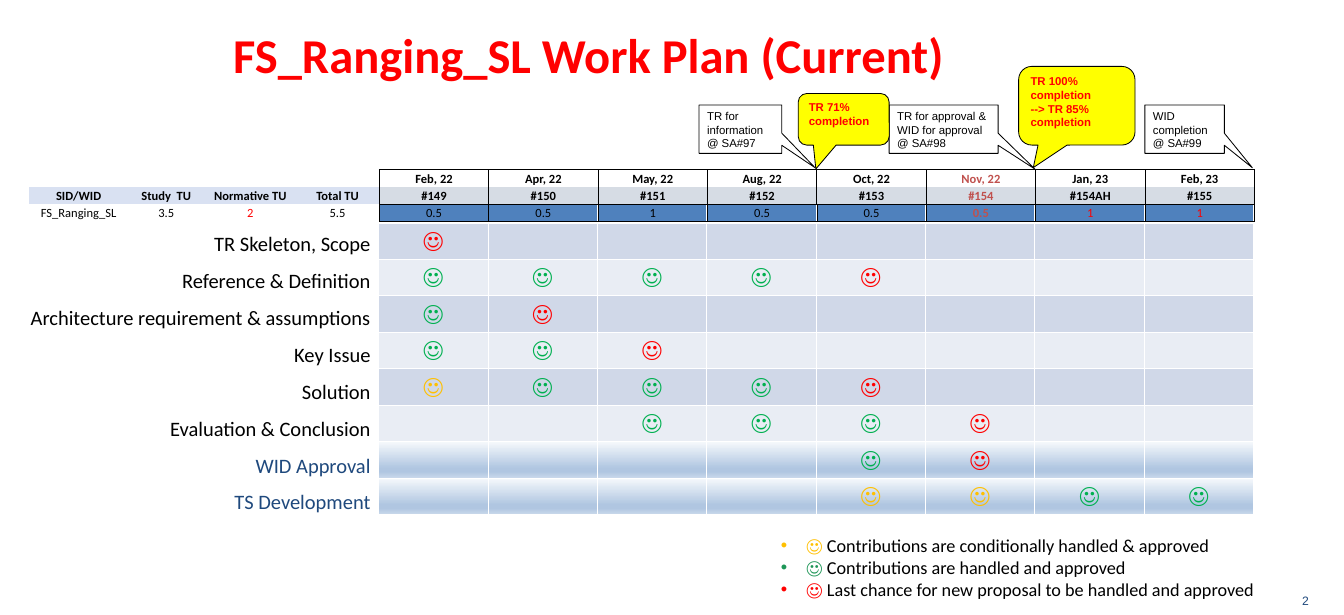
from lxml import etree
from pptx import Presentation
from pptx.dml.color import RGBColor
from pptx.enum.shapes import MSO_SHAPE
from pptx.enum.text import MSO_ANCHOR, PP_ALIGN
from pptx.oxml import parse_xml
from pptx.oxml.ns import nsdecls, qn
from pptx.util import Inches, Pt

LEFT, CENTER, RIGHT = PP_ALIGN.LEFT, PP_ALIGN.CENTER, PP_ALIGN.RIGHT
TOP, MIDDLE, BOTTOM = MSO_ANCHOR.TOP, MSO_ANCHOR.MIDDLE, MSO_ANCHOR.BOTTOM
RECT_CALLOUT = MSO_SHAPE.RECTANGULAR_CALLOUT
ROUND_CALLOUT = MSO_SHAPE.ROUNDED_RECTANGULAR_CALLOUT

BLACK, WHITE, RED, YELLOW = "000000", "FFFFFF", "FF0000", "FFFF00"
NAVY, BRICK, BLUE = "1F497D", "C0504D", "4F81BD"
BANDS = ["D0D8E8", "E9EDF4"]
GRADIENT = [(0, "F6F9FC"), (74, "B0C6E1"), (83, "B0C6E1"), (100, "CAD9EB")]
SMILEY = "☺"
SMILEY_COLORS = {"R": RED, "G": "00B050", "Y": "FFC000"}

TOPICS = [
    ("TR Skeleton, Scope", "R......."),
    ("Reference & Definition", "GGGGR..."),
    ("Architecture requirement & assumptions", "GR......"),
    ("Key Issue", "GGR....."),
    ("Solution", "YGGGR..."),
    ("Evaluation & Conclusion", "..GGGR.."),
    ("WID Approval", "....GR.."),
    ("TS Development", "....YYGG"),
]
STUDY_TOPICS = 6
TU_COLS = 4
MEETING_COL = 1.335
NOV = 9
SCHEDULE = [
    ["", "", "", "", "Feb, 22", "Apr, 22", "May, 22", "Aug, 22",
     "Oct, 22", "Nov, 22", "Jan, 23", "Feb, 23"],
    ["SID/WID", "Study  TU", "Normative TU", "Total TU", "#149", "#150", "#151",
     "#152", "#153", "#154", "#154AH", "#155"],
    ["FS_Ranging_SL", "3.5", "2", "5.5", "0.5", "0.5", "1", "0.5", "0.5", "0.5", "1", "1"],
]
MEETING_EDGES = [
    {"L": 1, "R": 1, "T": 1},
    {"L": 1, "R": 1, "B": 0.5},
    {"L": 0.5, "R": 0.5, "T": 0.5, "B": 0.5},
]
NOTES = [
    ("TR for information @ SA#97", (8.53, 1.28, 1.01, 0.59), (0.902, 0.797)),
    ("TR for approval & WID for approval @ SA#98", (10.85, 1.28, 1.33, 0.59), (0.839, 0.828)),
    ("WID completion @ SA#99", (13.97, 1.28, 0.97, 0.59), (0.853, 0.797)),
]
MILESTONES = [
    (["TR 71% completion"], (9.74, 1.14, 1.11, 0.63), (-0.306, 0.962, 0.167)),
    (["TR 100% completion", "--> TR 85% completion"], (12.43, 0.81, 1.42, 0.96),
     (-0.374, 0.786, 0.167)),
]
LEGEND = [
    ("FFC000", "Contributions are conditionally handled & approved"),
    ("1E9657", "Contributions are handled and approved"),
    (RED, "Last chance for new proposal to be handled and approved"),
]


def rgb(value):
    return RGBColor.from_string(value)


def write(p, text, size=11, color=BLACK, bold=False, font="Calibri", align=LEFT):
    p.alignment = align
    r = p.add_run()
    r.text = text
    r.font.name, r.font.size, r.font.bold = font, Pt(size), bold
    r.font.color.rgb = rgb(color)


def set_borders(cell, color, edges):
    """Draw the given edges (side: width in points) and clear the others."""
    tcPr = cell._tc.get_or_add_tcPr()
    for i, side in enumerate("LRTB"):
        width = edges.get(side, 0)
        fill = (f'<a:solidFill><a:srgbClr val="{color}"/></a:solidFill>'
                if width else "<a:noFill/>")
        tcPr.insert(i, parse_xml(
            f'<a:ln{side} {nsdecls("a")} w="{Pt(width)}">{fill}</a:ln{side}>'))


def set_gradient(cell, stops):
    gs = "".join(f'<a:gs pos="{pos * 1000}"><a:srgbClr val="{color}"/></a:gs>'
                 for pos, color in stops)
    cell._tc.get_or_add_tcPr().append(parse_xml(
        f'<a:gradFill {nsdecls("a")} rotWithShape="1"><a:gsLst>{gs}</a:gsLst>'
        '<a:lin ang="5400000" scaled="0"/></a:gradFill>'))


def set_fill(cell, fill):
    if fill is None:
        cell.fill.background()
    elif isinstance(fill, list):
        set_gradient(cell, fill)
    else:
        cell.fill.solid()
        cell.fill.fore_color.rgb = rgb(fill)


def add_bullet(p, indent):
    pPr = p._p.get_or_add_pPr()
    pPr.set("marL", str(Inches(indent)))
    pPr.set("indent", str(-Inches(indent)))
    etree.SubElement(pPr, qn("a:buFont")).set("typeface", "Arial")
    etree.SubElement(pPr, qn("a:buChar")).set("char", "•")


class Deck:
    def __init__(self, width, height):
        self.prs = Presentation()
        self.prs.slide_width, self.prs.slide_height = Inches(width), Inches(height)
        self.s = self.prs.slides.add_slide(self.prs.slide_layouts[6])

    def paragraphs(self, tf, count):
        return [tf.paragraphs[0]] + [tf.add_paragraph() for _ in range(count - 1)]

    def box(self, at, count=1, anchor=TOP, margin=None):
        """Add a text box and return its empty paragraphs."""
        tf = self.s.shapes.add_textbox(*map(Inches, at)).text_frame
        tf.word_wrap, tf.vertical_anchor = True, anchor
        if margin is not None:
            tf.margin_left = tf.margin_right = tf.margin_top = tf.margin_bottom = margin
        return self.paragraphs(tf, count)

    def callout(self, kind, lines, at, tail, fill, **fmt):
        sp = self.s.shapes.add_shape(kind, *map(Inches, at))
        sp.shadow.inherit = False
        for i, value in enumerate(tail):
            sp.adjustments[i] = value
        sp.fill.solid()
        sp.fill.fore_color.rgb = rgb(fill)
        sp.line.color.rgb, sp.line.width = rgb(BLACK), Pt(0.75)
        tf = sp.text_frame
        tf.word_wrap, tf.vertical_anchor = True, TOP
        for p, line in zip(self.paragraphs(tf, len(lines)), lines):
            write(p, line, size=10, font="Arial", **fmt)

    def table(self, left, top, widths, row_height, rows):
        size = sum(widths), row_height * rows
        table = self.s.shapes.add_table(
            rows, len(widths), *map(Inches, (left, top, *size))).table
        table.first_row = table.horz_banding = False
        for column, width in zip(table.columns, widths):
            column.width = Inches(width)
        for row in table.rows:
            row.height = Inches(row_height)
        return table

    def cell(self, cell, text, fill, edge_color, edges, **fmt):
        set_fill(cell, fill)
        set_borders(cell, edge_color, edges)
        p = cell.text_frame.paragraphs[0]
        if text:
            write(p, text, align=CENTER, **fmt)
        else:
            p._p.get_or_add_endParaRPr().set("sz", "1100")


def add_plan(deck):
    table = deck.table(4.62, 2.27, [MEETING_COL] * 8, 0.445, len(TOPICS) + 1)
    marks = ["." * 8] + [row for _, row in TOPICS]
    for i, row in enumerate(marks):
        fill = BLUE if i == 0 else BANDS[(i - 1) % 2] if i <= STUDY_TOPICS else GRADIENT
        edges = {"L": 1, "R": 1, "T": 3 if i == 1 else 1, "B": 3 if i == 0 else 1}
        for j, mark in enumerate(row):
            deck.cell(table.cell(i, j), SMILEY if mark != "." else "", fill, WHITE, edges,
                      size=20, bold=True, color=SMILEY_COLORS.get(mark, BLACK))


def add_schedule(deck):
    widths = [1.2, 0.94, 1.11, 1.02] + [MEETING_COL] * 8
    table = deck.table(0.36, 2.07, widths, 0.21, len(SCHEDULE))
    for i, row in enumerate(SCHEDULE):
        for j, text in enumerate(row):
            meeting = j >= TU_COLS
            fill = ("D6DCE4" if meeting else "D9E1F2") if i == 1 else None
            edges = MEETING_EDGES[i] if meeting else {}
            if j == TU_COLS - 1:
                edges = {"R": MEETING_EDGES[i]["L"]}
            color = BRICK if j == NOV else RED if i == 2 and j in (2, 10, 11) else BLACK
            cell = table.cell(i, j)
            cell.margin_left = cell.margin_right = cell.margin_top = cell.margin_bottom = 0
            cell.vertical_anchor = BOTTOM
            deck.cell(cell, text, fill, BLACK, edges, color=color, bold=i < 2 or j == NOV)


def main():
    deck = Deck(16.4, 7.5)
    write(deck.box((15.89, 7.23, 0.45, 0.18), anchor=BOTTOM, margin=0)[0], "2",
          size=10.7, font="Arial", color=NAVY)
    write(deck.box((2.56, 0.26, 9.25, 0.79), anchor=MIDDLE)[0],
          "FS_Ranging_SL Work Plan (Current)", size=42.7, color=RED, bold=True, align=CENTER)

    labels = deck.box((0.1, 2.62, 4.52, 3.74), len(TOPICS))
    for i, (p, (topic, _)) in enumerate(zip(labels, TOPICS)):
        p.line_spacing = 1.5
        write(p, topic, size=18, color=BLACK if i < STUDY_TOPICS else NAVY, align=RIGHT)

    add_plan(deck)
    add_schedule(deck)
    for text, at, tail in NOTES:
        deck.callout(RECT_CALLOUT, [text], at, tail, WHITE)

    for p, (color, meaning) in zip(deck.box((9.43, 6.47, 6.2, 0.91), len(LEGEND)), LEGEND):
        add_bullet(p, 0.31)
        write(p, SMILEY + " ", size=16, color=color)
        write(p, meaning, size=16)

    for lines, at, tail in MILESTONES:
        deck.callout(ROUND_CALLOUT, lines, at, tail, YELLOW, color=RED, bold=True)
    deck.prs.save("out.pptx")


if __name__ == "__main__":
    main()
